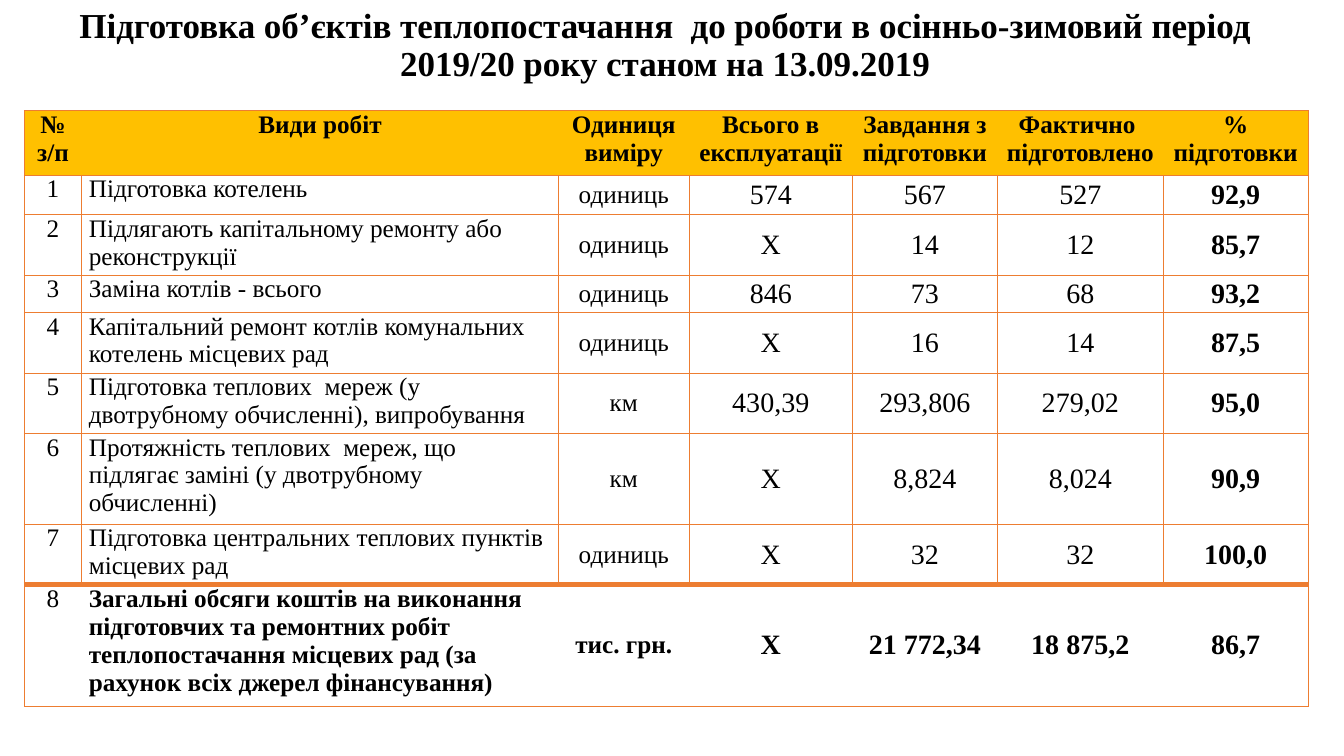
from lxml.etree import SubElement
from pptx import Presentation
from pptx.dml.color import RGBColor
from pptx.enum.text import MSO_ANCHOR, PP_ALIGN
from pptx.oxml.ns import qn
from pptx.util import Cm, Pt

COLORS = {"text": "000000", "header": "FFC000", "body": "FFFFFF", "border": "ED7D31"}

TITLE = ("Підготовка об’єктів теплопостачання  до роботи в осінньо-зимовий період "
         "2019/20 року станом на 13.09.2019")
HEADINGS = ["№ з/п", "Види робіт", "Одиниця виміру", "Всього в експлуатації",
            "Завдання з підготовки", "Фактично \nпідготовлено", "% підготовки"]
WORKS = [
    ["1", "Підготовка котелень", "одиниць", "574", "567", "527", "92,9"],
    ["2", "Підлягають капітальному ремонту або реконструкції", "одиниць",
     "Х", "14", "12", "85,7"],
    ["3", "Заміна котлів - всього", "одиниць", "846", "73", "68", "93,2"],
    ["4", "Капітальний ремонт котлів комунальних котелень місцевих рад", "одиниць",
     "Х", "16", "14", "87,5"],
    ["5", "Підготовка теплових  мереж (у двотрубному обчисленні), випробування", "км",
     "430,39", "293,806", "279,02", "95,0"],
    ["6", "Протяжність теплових  мереж, що підлягає заміні (у двотрубному обчисленні)",
     "км", "Х", "8,824", "8,024", "90,9"],
    ["7", "Підготовка центральних теплових пунктів місцевих рад", "одиниць",
     "X", "32", "32", "100,0"],
    ["8", "Загальні обсяги коштів на виконання підготовчих та ремонтних робіт "
          "теплопостачання місцевих рад (за рахунок всіх джерел фінансування)",
     "тис. грн.", "Х", "21 772,34", "18 875,2", "86,7"],
]
COLUMN_WIDTHS = [1.45, 12.01, 3.3, 4.11, 3.66, 4.17, 3.66]
ROW_HEIGHTS = [1.63, 0.99, 1.42, 0.94, 1.42, 1.47, 1.78, 1.35, 2.95]
NUMBER, WORK, UNIT, PERCENT = 0, 1, 2, 6
HAIRLINE, TOTAL_LINE = 0.5, 4


def write(frame, text, size=18, bold=False, align=PP_ALIGN.CENTER, spacing=None,
          font="Times New Roman", color="text"):
    """Fill a text frame, one paragraph for each line of text."""
    frame.word_wrap = True
    for index, line in enumerate(text.split("\n")):
        paragraph = frame.add_paragraph() if index else frame.paragraphs[0]
        paragraph.alignment = align
        if spacing:
            paragraph.line_spacing = spacing
        run = paragraph.add_run()
        run.text = line
        run.font.name, run.font.size, run.font.bold = font, Pt(size), bold
        run.font.color.rgb = RGBColor.from_string(COLORS[color])


def set_borders(cell, **widths):
    """Draw the sides L, R, T and B with widths in points; 0 hides a side."""
    properties = cell._tc.get_or_add_tcPr()
    for side in "LRTB":
        line = SubElement(properties, qn(f"a:ln{side}"), w=str(Pt(widths[side])))
        if widths[side]:
            fill = SubElement(line, qn("a:solidFill"))
            SubElement(fill, qn("a:srgbClr"), val=COLORS["border"])
        else:
            SubElement(line, qn("a:noFill"))


class ReportSlide:
    def __init__(self, presentation):
        self.slide = presentation.slides.add_slide(presentation.slide_layouts[6])
        self.side_margin = Cm(0.18)

    def title(self, text, left, top, width, height):
        box = self.slide.shapes.add_textbox(Cm(left), Cm(top), Cm(width), Cm(height))
        box.text_frame.vertical_anchor = MSO_ANCHOR.MIDDLE
        write(box.text_frame, text, size=25, bold=True, spacing=0.9)

    def table(self, rows, left, top):
        table = self.slide.shapes.add_table(
            len(rows), len(COLUMN_WIDTHS), Cm(left), Cm(top),
            Cm(sum(COLUMN_WIDTHS)), Cm(sum(ROW_HEIGHTS))).table
        table.first_row = table.horz_banding = False
        for column, width in zip(table.columns, COLUMN_WIDTHS):
            column.width = Cm(width)
        for row, height in zip(table.rows, ROW_HEIGHTS):
            row.height = Cm(height)
        total = len(rows) - 1
        for r, values in enumerate(rows):
            for c, value in enumerate(values):
                self.table_cell(table.cell(r, c), value, r, c, total)

    def table_cell(self, cell, value, row, column, total):
        header = row == 0
        inner = 0 if row in (0, total) else HAIRLINE
        set_borders(cell,
                    L=inner if column else HAIRLINE,
                    R=inner if column < PERCENT else HAIRLINE,
                    T=TOTAL_LINE if row == total else HAIRLINE,
                    B=TOTAL_LINE if row == total - 1 else HAIRLINE)
        cell.fill.solid()
        cell.fill.fore_color.rgb = RGBColor.from_string(
            COLORS["header" if header else "body"])
        cell.margin_left = cell.margin_right = self.side_margin
        cell.margin_top = cell.margin_bottom = 0
        at_top = header or column < UNIT
        cell.vertical_anchor = MSO_ANCHOR.TOP if at_top else MSO_ANCHOR.MIDDLE
        write(cell.text_frame, value,
              size=18 if header or column <= UNIT else 20,
              bold=header or column == PERCENT or (row == total and column != NUMBER),
              align=PP_ALIGN.LEFT if column == WORK and not header else PP_ALIGN.CENTER)


def main():
    presentation = Presentation()
    presentation.slide_width, presentation.slide_height = Cm(33.87), Cm(19.05)
    report = ReportSlide(presentation)
    report.title(TITLE, 1.42, 0, 30.68, 2.34)
    report.table([HEADINGS, *WORKS], 0.61, 2.79)
    presentation.save("out.pptx")


if __name__ == "__main__":
    main()
